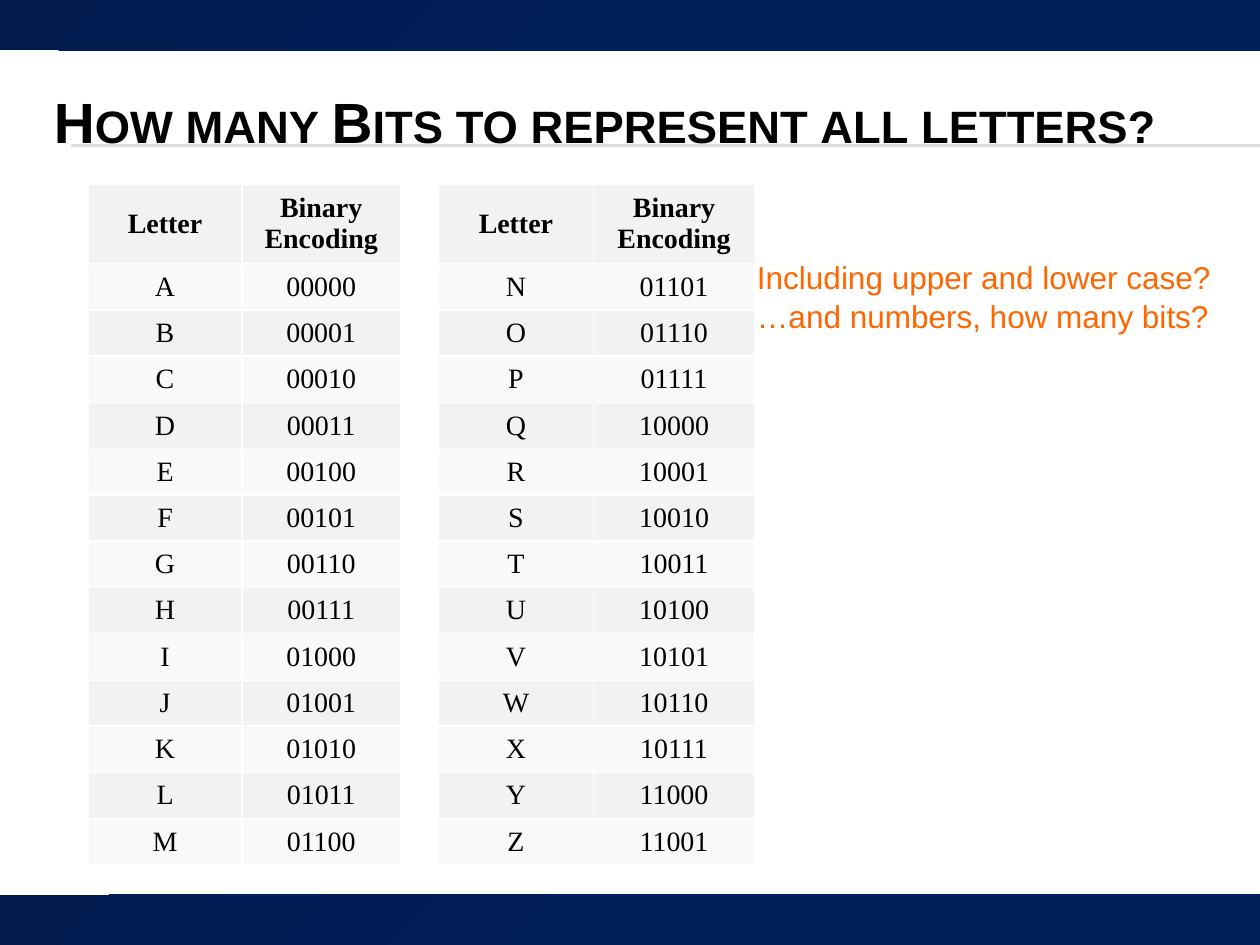
from lxml.etree import SubElement
from pptx import Presentation
from pptx.dml.color import RGBColor
from pptx.enum.shapes import MSO_CONNECTOR, MSO_SHAPE
from pptx.enum.text import MSO_ANCHOR, PP_ALIGN
from pptx.oxml.ns import qn
from pptx.util import Inches, Pt

W, H = 10, 7.5
BAND_H = 0.4
TABLE_TOP, TABLE_H, HEADER_H = 1.46, 5.4, 0.63

WHITE = RGBColor(0xFF, 0xFF, 0xFF)
BLACK = RGBColor(0, 0, 0)
NAVY_DARK = RGBColor(0x01, 0x1B, 0x4E)
NAVY = RGBColor(0x01, 0x1F, 0x5B)
RULE_GREY = RGBColor(0xDD, 0xDD, 0xDD)
ORANGE = RGBColor(0xFF, 0x66, 0x00)
ROW_FILLS = (RGBColor(0xF2, 0xF2, 0xF2), RGBColor(0xF9, 0xF9, 0xF9))


def style_runs(tf, font, size, color, bold=False):
    for p in tf.paragraphs:
        for r in p.runs:
            r.font.name, r.font.size, r.font.bold = font, Pt(size), bold
            r.font.color.rgb = color


def add_rule(s, y):
    line = s.shapes.add_connector(MSO_CONNECTOR.STRAIGHT, Inches(0.56), Inches(y),
                                  Inches(W), Inches(y))
    line.line.color.rgb = RULE_GREY
    line.line.width = Pt(0.75)
    SubElement(line._element.spPr, qn("a:effectLst"))


def add_band(s, y):
    sp = s.shapes.add_shape(MSO_SHAPE.RECTANGLE, 0, Inches(y), Inches(W), Inches(BAND_H))
    sp.shadow.inherit = False
    sp.line.fill.background()
    sp.fill.gradient()
    sp.fill.gradient_angle = 315
    for stop, color, position in zip(sp.fill.gradient_stops, (NAVY_DARK, NAVY), (0, 0.5)):
        stop.color.rgb, stop.position = color, position


def add_text(s, box, text, size, color, bold=False, wrap=True):
    tf = s.shapes.add_textbox(*map(Inches, box)).text_frame
    tf.word_wrap = wrap
    tf.text = text
    style_runs(tf, "Arial", size, color, bold)
    return tf


def set_borders(cell):
    """Draw thin white lines on all four sides, placed before the cell's fill."""
    tc_pr = cell._tc.get_or_add_tcPr()
    for i, side in enumerate(("lnL", "lnR", "lnT", "lnB")):
        ln = SubElement(tc_pr, qn(f"a:{side}"), w=str(Pt(1)))
        SubElement(SubElement(ln, qn("a:solidFill")), qn("a:srgbClr"), val=str(WHITE))
        tc_pr.insert(i, ln)


def add_code_table(s, left, widths, header, letters):
    """List each letter with its place in the alphabet as five binary digits."""
    rows = [("Letter", header)]
    rows += [(c, f"{ord(c) - ord('A'):05b}") for c in letters]
    table = s.shapes.add_table(len(rows), 2, Inches(left), Inches(TABLE_TOP),
                               Inches(sum(widths)), Inches(TABLE_H)).table
    for column, width in zip(table.columns, widths):
        column.width = Inches(width)
    row_h = (TABLE_H - HEADER_H) / len(letters)
    for i, texts in enumerate(rows):
        table.rows[i].height = Inches(row_h if i else HEADER_H)
        for cell, text in zip(table.rows[i].cells, texts):
            cell.text = text
            cell.vertical_anchor = MSO_ANCHOR.MIDDLE
            cell.fill.solid()
            cell.fill.fore_color.rgb = ROW_FILLS[i % 2]
            set_borders(cell)
            style_runs(cell.text_frame, "Times New Roman", 16, BLACK, bold=i == 0)
            for p in cell.text_frame.paragraphs:
                p.alignment = PP_ALIGN.CENTER


def main():
    prs = Presentation()
    prs.slide_width, prs.slide_height = Inches(W), Inches(H)
    s = prs.slides.add_slide(prs.slide_layouts[6])

    for y in (1.15, 1.16):
        add_rule(s, y)
    for y in (0, H - BAND_H):
        add_band(s, y)

    title = add_text(s, (0.33, 0.5, 9.5, 0.92), "How many Bits to represent all letters?",
                     32.4, BLACK, bold=True)
    title.vertical_anchor = MSO_ANCHOR.MIDDLE
    title.paragraphs[0].runs[0].font._element.set("cap", "small")

    question = add_text(s, (5.91, 1.98, 3.84, 1.01),
                        "Including upper and lower case?\n…and numbers, how many bits?",
                        18, ORANGE, wrap=False)
    for p in question.paragraphs:
        p.line_spacing = 1.05

    add_code_table(s, 0.7, (1.22, 1.26), "Binary Encoding", "ABCDEFGHIJKLM")
    add_code_table(s, 3.48, (1.23, 1.28), "Binary\nEncoding", "NOPQRSTUVWXYZ")
    prs.save("out.pptx")


if __name__ == "__main__":
    main()
